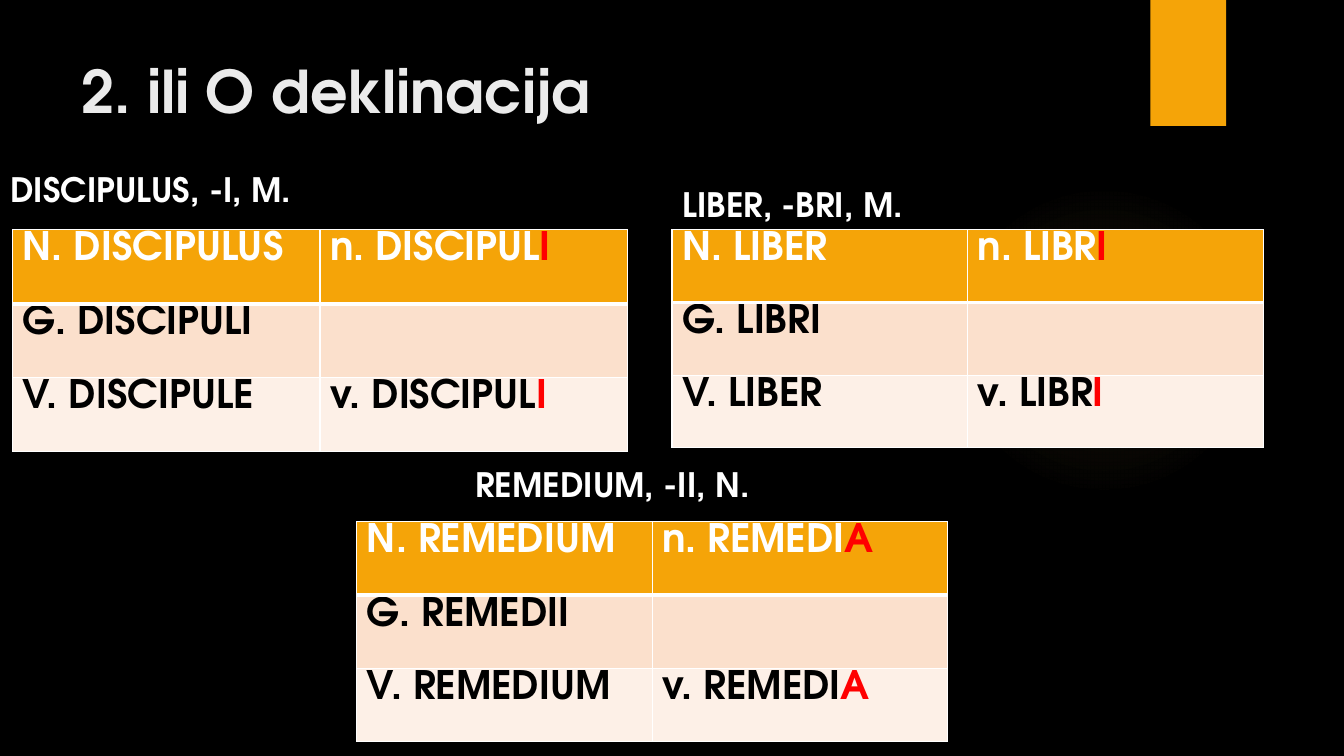
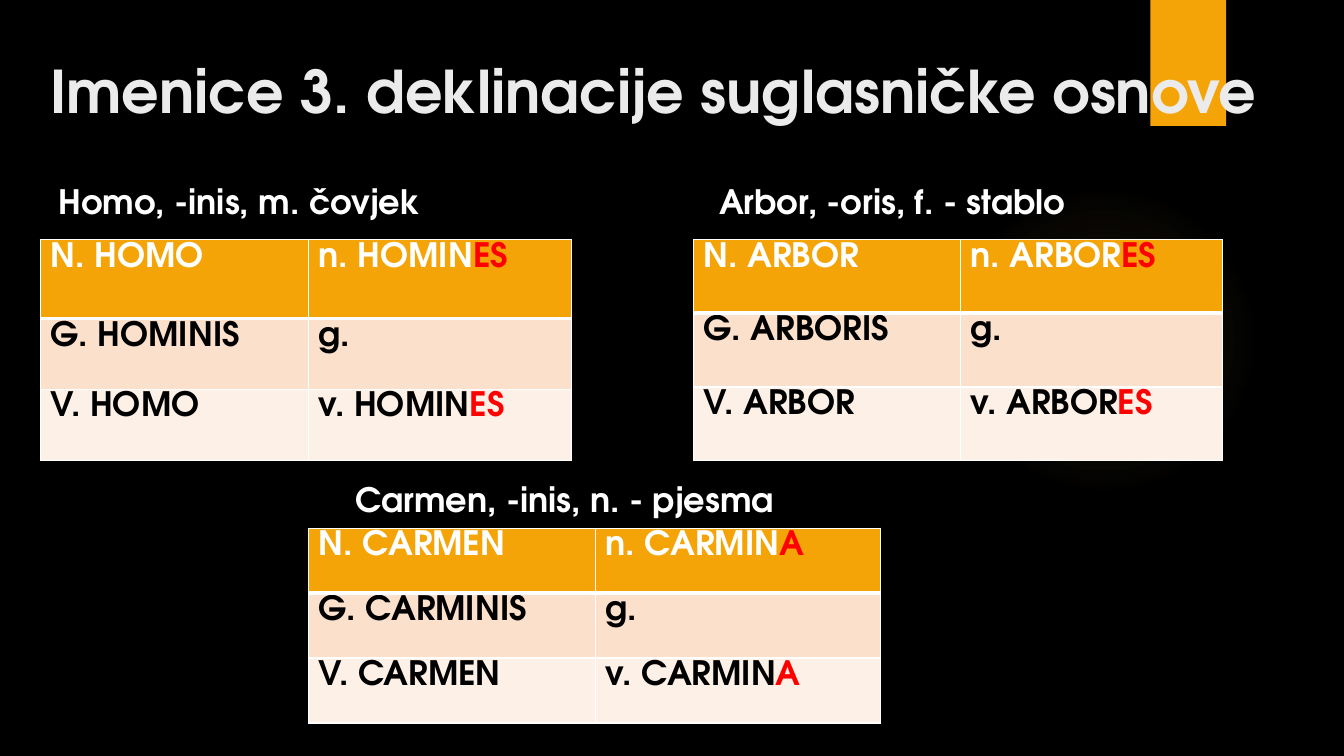
from lxml import etree
from pptx import Presentation
from pptx.dml.color import RGBColor
from pptx.enum import shapes, text
from pptx.oxml import parse_xml
from pptx.oxml.ns import nsdecls, qn
from pptx.util import Pt

FONT = "TeX Gyre Adventor"
BLACK = RGBColor(0x00, 0x00, 0x00)
WHITE = RGBColor(0xFF, 0xFF, 0xFF)
TITLE = RGBColor(0xEB, 0xEB, 0xEB)
ORANGE = RGBColor(0xF5, 0xA4, 0x08)
PEACH = RGBColor(0xFB, 0xE0, 0xCC)
CREAM = RGBColor(0xFD, 0xF0, 0xE7)
RED = RGBColor(0xFF, 0x00, 0x00)
GLOW = RGBColor(0xFA, 0xC9, 0x6A)
ROW_FILLS = [ORANGE, PEACH, CREAM]

# Content: "|" splits a stem from its highlighted ending; boxes are left, top, width, height
SLIDES = [
    dict(title="2. ili O deklinacija", title_box=(51, 35.5, 741, 110), size=28, nouns=[
        dict(caption="DISCIPULUS, -I, M.", box=(0.4, 84.2, 432.7, 69.1),
             at=(9, 164.2), cols=(219.6, 219.6), rows=(52.8, 52.8, 52.8),
             forms=[("N. DISCIPULUS", "n. DISCIPUL|I"),
                    ("G. DISCIPULI", ""),
                    ("V. DISCIPULE", "v. DISCIPUL|I")]),
        dict(caption="LIBER, -BRI, M.", box=(480.4, 112.3, 345, 51.1),
             at=(480, 164.2), cols=(211.2, 211.2), rows=(51.9, 51.9, 51.9),
             forms=[("N. LIBER", "n. LIBR|I"),
                    ("G. LIBRI", ""),
                    ("V. LIBER", "v. LIBR|I")]),
        dict(caption="REMEDIUM, -II, N.", box=(332.6, 329.4, 338.4, 34.6),
             at=(254.9, 372.7), cols=(211, 211), rows=(52.3, 52.3, 52.3),
             forms=[("N. REMEDIUM", "n. REMEDI|A"),
                    ("G. REMEDII", ""),
                    ("V. REMEDIUM", "v. REMEDI|A")]),
    ]),
    dict(title="Imenice 3. deklinacije suglasničke osnove",
         title_box=(28.8, 35.5, 922, 87), size=24, nouns=[
        dict(caption="Homo, -inis, m. čovjek", box=(34.6, 107.6, 398.9, 54),
             at=(28.8, 171.2), cols=(191.5, 187.9), rows=(56.4, 50.6, 50.6),
             forms=[("N. HOMO", "n. HOMIN|ES"),
                    ("G. HOMINIS", "g."),
                    ("V. HOMO", "v. HOMIN|ES")]),
        dict(caption="Arbor, -oris, f. - stablo", box=(506.5, 114.1, 366.5, 47.5),
             at=(495.4, 171.2), cols=(190.8, 187.2), rows=(52.6, 52.6, 52.6),
             forms=[("N. ARBOR", "n. ARBOR|ES"),
                    ("G. ARBORIS", "g."),
                    ("V. ARBOR", "v. ARBOR|ES")]),
        dict(caption="Carmen, -inis, n. - pjesma", box=(246.6, 329, 362.9, 45.4),
             at=(220.3, 377.3), cols=(205.2, 203.6), rows=(46.4, 46.4, 46.4),
             forms=[("N. CARMEN", "n. CARMIN|A"),
                    ("G. CARMINIS", "g."),
                    ("V. CARMEN", "v. CARMIN|A")]),
    ]),
]


def set_font(font, size, color):
    font.name, font.size, font.bold = FONT, Pt(size), True
    font.color.rgb = color


def add_preset(s, kind, box, color):
    sp = s.shapes.add_shape(kind, *map(Pt, box))
    sp.shadow.inherit = False
    sp.fill.solid()
    sp.fill.fore_color.rgb = color
    sp.line.fill.background()
    return sp


def add_backdrop(s):
    s.background.fill.solid()
    s.background.fill.fore_color.rgb = BLACK
    # Faint round glow that fades outwards
    sp = add_preset(s, shapes.MSO_SHAPE.OVAL, (677.5, 131.8, 221.8, 221.8), GLOW)
    stops = "".join(
        f'<a:gs pos="{pos * 1000}"><a:srgbClr val="{GLOW}">'
        f'<a:alpha val="{alpha * 1000}"/></a:srgbClr></a:gs>'
        for pos, alpha in [(0, 7), (36, 6), (69, 0), (100, 0)])
    grad = parse_xml(
        f'<a:gradFill {nsdecls("a")} rotWithShape="1"><a:gsLst>{stops}</a:gsLst>'
        '<a:path path="circle"><a:fillToRect l="50000" t="50000" r="50000" b="50000"/>'
        '</a:path></a:gradFill>')
    solid = sp._element.spPr.find(qn("a:solidFill"))
    solid.getparent().replace(solid, grad)
    # Tab hanging from the top edge
    add_preset(s, shapes.MSO_SHAPE.RECTANGLE, (821.8, 0, 54, 90), ORANGE)


def add_text(s, box, words, size, color, anchor):
    tf = s.shapes.add_textbox(*map(Pt, box)).text_frame
    tf.word_wrap = True
    tf.vertical_anchor = anchor
    p = tf.paragraphs[0]
    p.text = words
    set_font(p.font, size, color)


def set_borders(cell, row):
    tc_pr = cell._tc.get_or_add_tcPr()
    widths = dict(L=1, R=1, T=3 if row == 1 else 1, B=3 if row == 0 else 1)
    for side, width in widths.items():
        ln = etree.SubElement(tc_pr, qn(f"a:ln{side}"), w=str(Pt(width)))
        fill = etree.SubElement(ln, qn("a:solidFill"))
        etree.SubElement(fill, qn("a:srgbClr"), val=str(WHITE))


def fill_cell(cell, form, row, size):
    set_borders(cell, row)
    cell.fill.solid()
    cell.fill.fore_color.rgb = ROW_FILLS[row]
    cell.margin_top = cell.margin_bottom = Pt(3.6)
    p = cell.text_frame.paragraphs[0]
    p.line_spacing = 0.9
    set_font(p.font, size, BLACK if row else WHITE)
    stem, _, ending = form.partition("|")
    if stem:
        p.add_run().text = stem
    if ending:
        r = p.add_run()
        r.text = ending
        r.font.color.rgb = RED


def add_noun_table(s, noun, size):
    cols, rows = noun["cols"], noun["rows"]
    box = (*noun["at"], sum(cols), sum(rows))
    table = s.shapes.add_table(len(rows), len(cols), *map(Pt, box)).table
    for column, width in zip(table.columns, cols):
        column.width = Pt(width)
    for i, (height, forms) in enumerate(zip(rows, noun["forms"])):
        table.rows[i].height = Pt(height)
        for j, form in enumerate(forms):
            fill_cell(table.cell(i, j), form, i, size)


def main():
    prs = Presentation()
    prs.slide_width, prs.slide_height = Pt(960), Pt(540)
    for page in SLIDES:
        s = prs.slides.add_slide(prs.slide_layouts[6])
        add_backdrop(s)
        add_text(s, page["title_box"], page["title"], 42, TITLE, text.MSO_ANCHOR.TOP)
        for noun in page["nouns"]:
            add_text(s, noun["box"], noun["caption"], 24, WHITE, text.MSO_ANCHOR.BOTTOM)
            add_noun_table(s, noun, page["size"])
    prs.save("out.pptx")


if __name__ == "__main__":
    main()
